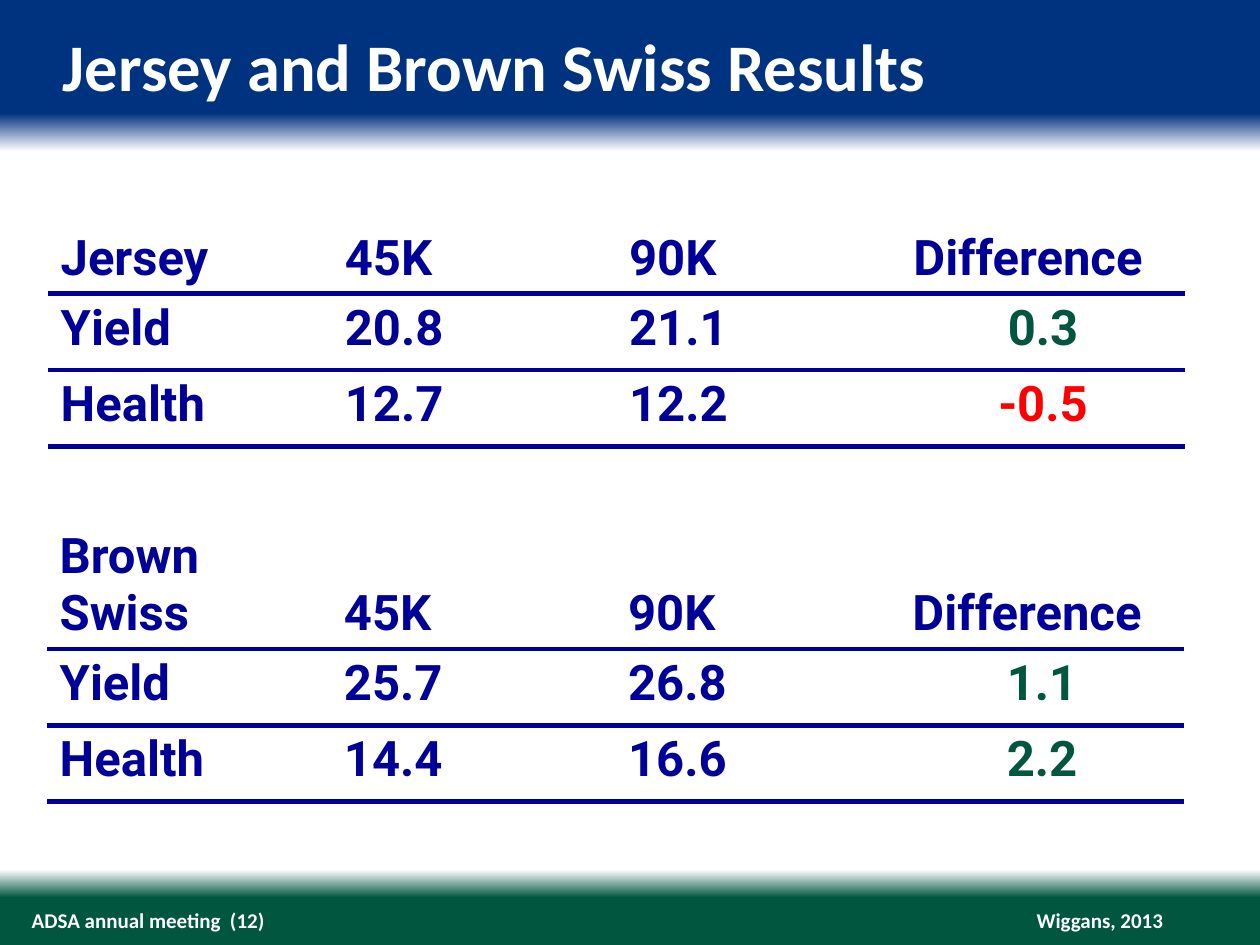
import pptx
import pptx.dml.color
import pptx.enum.text
import pptx.oxml
import pptx.oxml.ns
import pptx.util
from lxml import etree

Cm = pptx.util.Cm
Pt = pptx.util.Pt
ANCHOR = pptx.enum.text.MSO_ANCHOR
ALIGN = pptx.enum.text.PP_ALIGN
qn = pptx.oxml.ns.qn

NAVY, BLUE, GREEN, RED, WHITE = "000099", "00337F", "00563F", "FF0000", "FFFFFF"
BACKGROUND_STOPS = [(0, BLUE), (12, BLUE), (16, WHITE), (92, WHITE), (95, GREEN), (100, GREEN)]
NO_TABLE_STYLE = "{2D5ABB26-0587-4C30-8999-92F81FD0307C}"

TITLE = "Jersey and Brown Swiss Results"
FOOTER_LEFT = "ADSA annual meeting  (12)"
FOOTER_RIGHT = "Wiggans, 2013"
# Left and top in centimetres, then the rows
TABLES = [
    (0.97, 3.1, [["Jersey", "45K", "90K", "Difference"],
                 ["Yield", "20.8", "21.1", "0.3"],
                 ["Health", "12.7", "12.2", "-0.5"]]),
    (0.95, 10.26, [["Brown Swiss", "45K", "90K", "Difference"],
                   ["Yield", "25.7", "26.8", "1.1"],
                   ["Health", "14.4", "16.6", "2.2"]]),
]
COLUMN_WIDTH = 5.73
ROW_HEIGHTS = [2.82, 1.54, 1.54]


def rgb(value):
    return pptx.dml.color.RGBColor.from_string(value)


def write(frame, text, size=28, font="Roboto", color=NAVY, align=ALIGN.LEFT):
    paragraph = frame.paragraphs[0]
    paragraph.alignment = align
    run = paragraph.add_run()
    run.text = text
    run.font.size = Pt(size)
    run.font.name = font
    run.font.bold = True
    run.font.color.rgb = rgb(color)


def add_text(slide, left, top, width, height, text, anchor=ANCHOR.MIDDLE, wrap=True, **style):
    frame = slide.shapes.add_textbox(Cm(left), Cm(top), Cm(width), Cm(height)).text_frame
    frame.margin_left = frame.margin_right = frame.margin_top = frame.margin_bottom = 0
    frame.word_wrap = wrap
    frame.vertical_anchor = anchor
    write(frame, text, font="Calibri", color=WHITE, **style)


def set_background(slide):
    fill = slide.background.fill
    fill.gradient()
    fill.gradient_angle = 270
    stop_list = next(slide.background.fill._xPr.iter(qn("a:gsLst")))
    for stop in list(stop_list):
        stop_list.remove(stop)
    for position, color in BACKGROUND_STOPS:
        stop = etree.SubElement(stop_list, qn("a:gs"), pos=str(position * 1000))
        etree.SubElement(stop, qn("a:srgbClr"), val=color)


def add_border(cell, side, color=NAVY, width=3):
    line = etree.SubElement(cell._tc.get_or_add_tcPr(), qn("a:ln" + side), w=str(Pt(width)))
    fill = etree.SubElement(line, qn("a:solidFill"))
    etree.SubElement(fill, qn("a:srgbClr"), val=color)


def add_results(slide, left, top, rows):
    columns = len(rows[0])
    frame = slide.shapes.add_table(len(rows), columns, Cm(left), Cm(top),
                                   Cm(COLUMN_WIDTH * columns), Cm(sum(ROW_HEIGHTS)))
    table = frame.table
    table.first_row = table.horz_banding = False
    next(table._tbl.iter(qn("a:tableStyleId"))).text = NO_TABLE_STYLE
    for column in table.columns:
        column.width = Cm(COLUMN_WIDTH)
    for row_index, values in enumerate(rows):
        table.rows[row_index].height = Cm(ROW_HEIGHTS[row_index])
        for column_index, text in enumerate(values):
            cell = table.cell(row_index, column_index)
            cell.vertical_anchor = ANCHOR.TOP if row_index else ANCHOR.BOTTOM
            if row_index == 1:
                add_border(cell, "T")
            add_border(cell, "B")
            cell.fill.background()
            if row_index and column_index == columns - 1:
                color = RED if text.startswith("-") else GREEN
                write(cell.text_frame, text, color=color, align=ALIGN.CENTER)
            else:
                write(cell.text_frame, text)


def main():
    presentation = pptx.Presentation()
    presentation.slide_width, presentation.slide_height = Cm(25.4), Cm(19.05)
    slide = presentation.slides.add_slide(presentation.slide_layouts[6])
    set_background(slide)
    add_text(slide, 20.85, 18.29, 2.6, 0.51, FOOTER_RIGHT, size=12, align=ALIGN.RIGHT, wrap=False)
    add_text(slide, 0.64, 18.29, 13.26, 0.51, FOOTER_LEFT, size=12)
    add_text(slide, 1.27, 0.51, 22.86, 1.63, TITLE, size=38, anchor=ANCHOR.TOP)
    for left, top, rows in TABLES:
        add_results(slide, left, top, rows)
    presentation.save("out.pptx")


if __name__ == "__main__":
    main()
